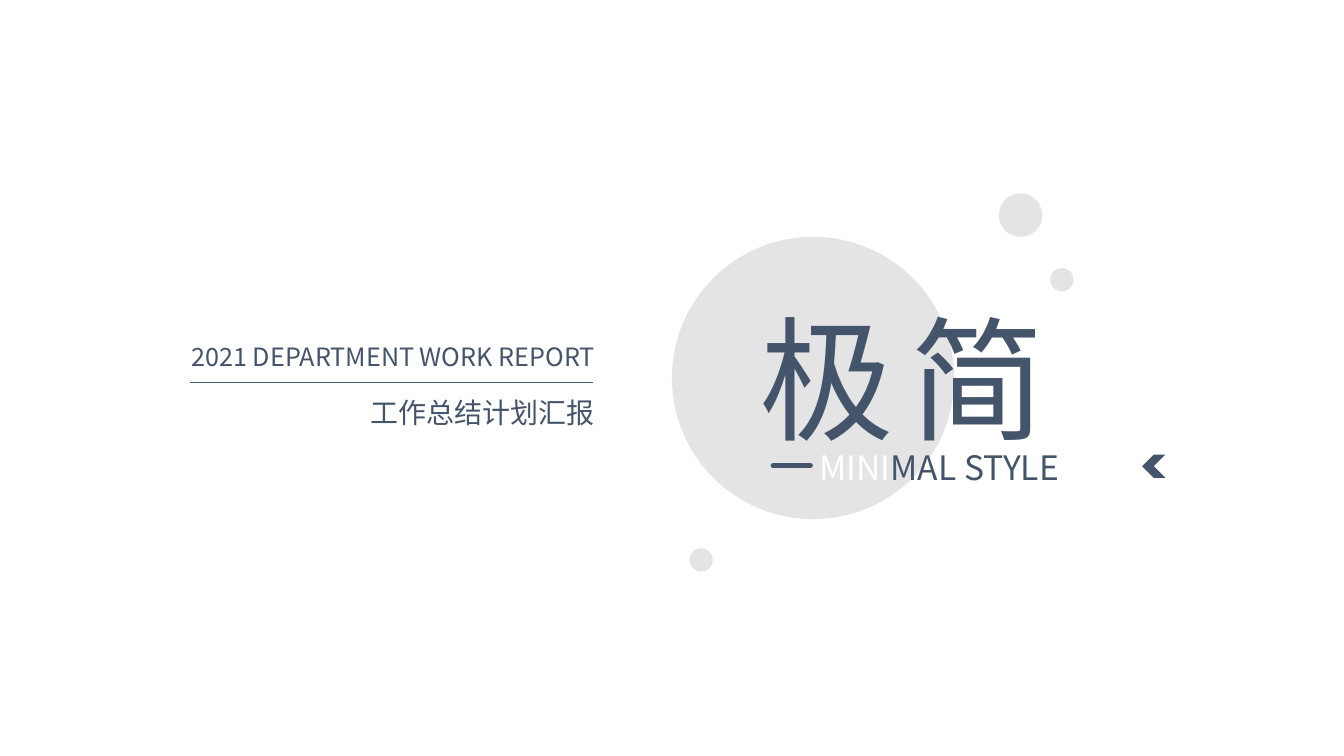
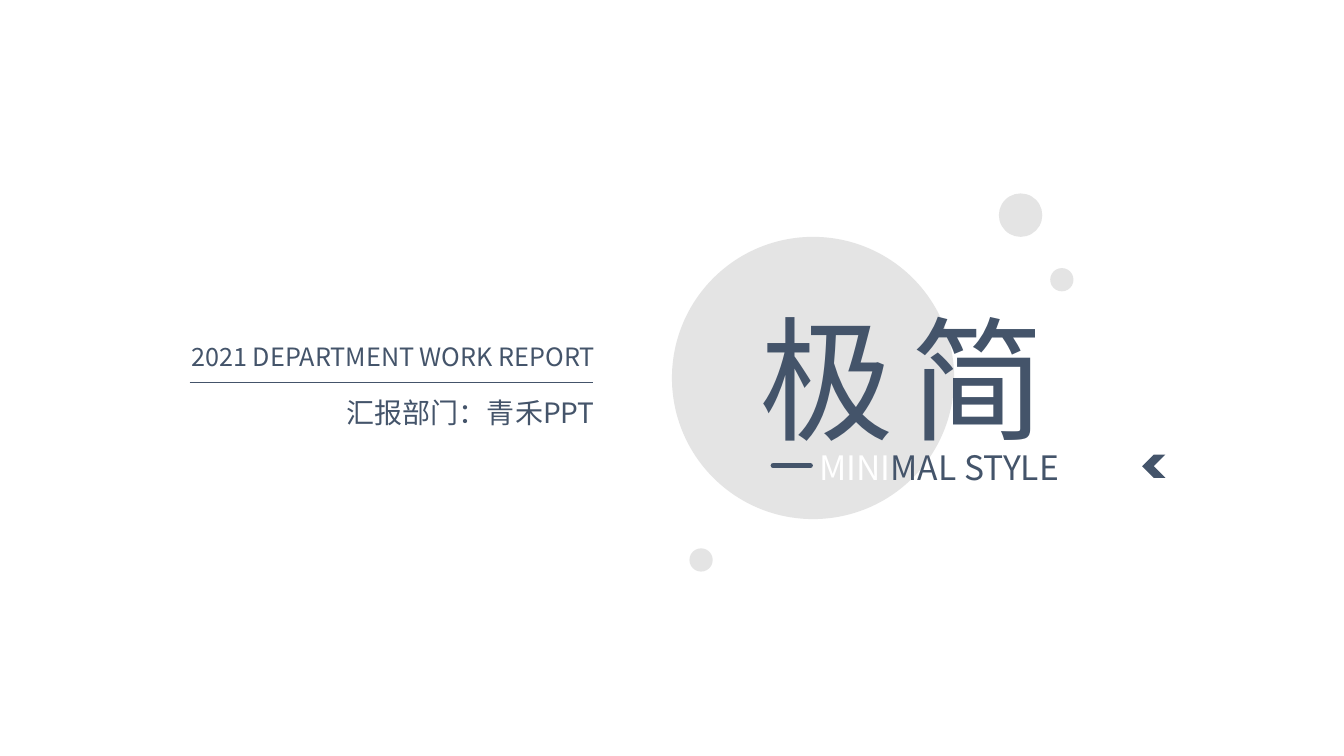
from pptx import Presentation
from pptx.dml.color import RGBColor
from pptx.enum.shapes import MSO_CONNECTOR as CONNECTOR, MSO_SHAPE as SHAPE
from pptx.enum.text import MSO_ANCHOR as ANCHOR, MSO_AUTO_SIZE as AUTO_SIZE, PP_ALIGN as ALIGN
from pptx.oxml.ns import qn
from pptx.util import Pt
from lxml.etree import SubElement

COLORS = {"ink": "44546A", "bubble": "D9D9D9", "paper": "FFFFFF"}
FONT = "Noto Sans CJK SC"
BUBBLE_OPACITY = 70
BUBBLES = [  # left, top, diameter
    (480, 169.2, 201.6),
    (713.5, 138.2, 31),
    (750.2, 191.5, 16.6),
    (492.5, 391.7, 16.6),
]
SUBTITLES = ["工作总结计划汇报", "汇报部门：青禾PPT"]


def color(name):
    return RGBColor.from_string(COLORS[name])


def add_mark(slide, preset, left, top, size, fill):
    mark = slide.shapes.add_shape(preset, Pt(left), Pt(top), Pt(size), Pt(size))
    mark.shadow.inherit = False
    mark.fill.solid()
    mark.fill.fore_color.rgb = color(fill)
    mark.line.fill.background()
    return mark


def add_bubble(slide, left, top, diameter):
    bubble = add_mark(slide, SHAPE.FLOWCHART_CONNECTOR, left, top, diameter, "bubble")
    fill_color = bubble.element.spPr.find(qn("a:solidFill")).find(qn("a:srgbClr"))
    SubElement(fill_color, qn("a:alpha")).set("val", str(BUBBLE_OPACITY * 1000))


def add_rule(slide, left, right, y, width, cap="flat"):
    rule = slide.shapes.add_connector(CONNECTOR.STRAIGHT, Pt(left), Pt(y), Pt(right), Pt(y))
    rule.line.color.rgb = color("ink")
    rule.line.width = Pt(width)
    properties = rule.element.spPr
    properties.find(qn("a:ln")).set("cap", cap)
    SubElement(properties, qn("a:effectLst"))


def place(box, left, top, width, height):
    """Position a text box or placeholder and bring it to the front."""
    box.left, box.top, box.width, box.height = map(Pt, (left, top, width, height))
    box.element.getparent().append(box.element)


def write(box, runs, size, align=ALIGN.LEFT, spacing=0, wrap=True):
    """Fill a box with (text, color name) runs; spacing is in points between letters."""
    frame = box.text_frame
    frame.word_wrap = wrap
    frame.auto_size = AUTO_SIZE.NONE
    frame.vertical_anchor = ANCHOR.TOP
    para = frame.paragraphs[0]
    para.alignment = align
    para.space_before = Pt(0)
    for text, color_name in runs:
        span = para.add_run()
        span.text = text
        span.font.size = Pt(size)
        span.font.name = FONT
        span.font.color.rgb = color(color_name)
        properties = span.font._element
        properties.set("spc", str(spacing * 100))
        SubElement(properties, qn("a:ea")).set("typeface", FONT)


def add_text(slide, bounds, *args, **kwargs):
    box = slide.shapes.add_textbox(*map(Pt, bounds))
    write(box, *args, **kwargs)


def add_cover(deck, subtitle_text):
    page = deck.slides.add_slide(deck.slide_layouts[0])
    for bubble in BUBBLES:
        add_bubble(page, *bubble)

    title, subtitle = page.placeholders
    place(title, 535, 208, 220, 124)
    write(title, [("极简", "ink")], 96, spacing=12, wrap=False)
    add_rule(page, 552.2, 578.9, 332.6, 3.5, cap="rnd")
    add_text(page, (578.2, 315.4, 235.4, 36),
             [("MINI", "paper"), ("MAL STYLE", "ink")], 24, ALIGN.JUSTIFY)
    add_mark(page, SHAPE.CHEVRON, 815.8, 324.7, 16.6, "ink").rotation = 180

    add_text(page, (110.9, 240.5, 321.1, 28.8),
             [("2021 DEPARTMENT WORK REPORT", "ink")], 18, ALIGN.RIGHT)
    add_rule(page, 135.4, 423.4, 272.9, 0.5)
    place(subtitle, 176.4, 278.6, 255.6, 31.7)
    write(subtitle, [(subtitle_text, "ink")], 20, ALIGN.RIGHT)


def main():
    deck = Presentation()
    deck.slide_width, deck.slide_height = Pt(960), Pt(540)
    for subtitle_text in SUBTITLES:
        add_cover(deck, subtitle_text)
    deck.save("out.pptx")


if __name__ == "__main__":
    main()
